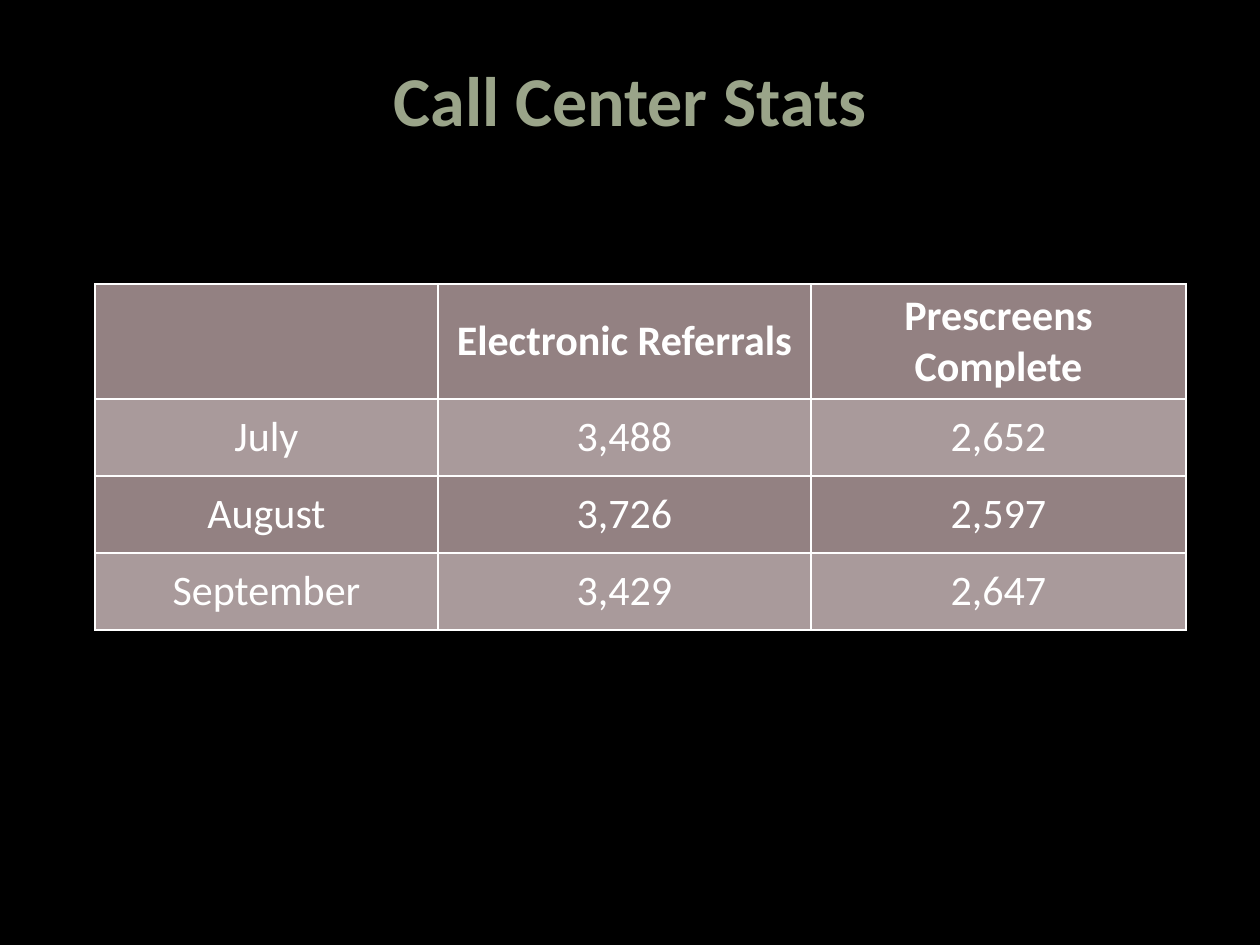
from lxml import etree
from pptx import Presentation
from pptx.dml.color import RGBColor
from pptx.enum.text import MSO_ANCHOR, PP_ALIGN
from pptx.oxml import parse_xml
from pptx.oxml.ns import nsdecls, qn
from pptx.util import Pt

PX = 914400 // 126
CENTER = PP_ALIGN.CENTER
MIDDLE = MSO_ANCHOR.MIDDLE
FONT = "Calibri"
COLORS = {
    "background": "000000",
    "title": "9AA489",
    "outline": "404040",
    "text": "FFFFFF",
    "border": "FFFFFF",
    "dark_row": "938182",
    "light_row": "A99A9B",
}
COL_WIDTHS = [343, 373, 375]
ROW_HEIGHTS = [105, 77, 77, 77]
STATS = [
    ["", "Electronic Referrals", "Prescreens Complete"],
    ["July", "3,488", "2,652"],
    ["August", "3,726", "2,597"],
    ["September", "3,429", "2,647"],
]


def px(n):
    return n * PX


def rgb(name):
    return RGBColor.from_string(COLORS[name])


def write(tf, text, size, color, bold):
    p = tf.paragraphs[0]
    p.alignment = CENTER
    r = p.add_run()
    r.text = text
    r.font.name = FONT
    r.font.size = Pt(size)
    r.font.bold = bold
    r.font.color.rgb = rgb(color)
    return r


def outline_text(r):
    """Give a run a thin, mostly transparent outline."""
    ln = parse_xml(
        f'<a:ln {nsdecls("a")} w="{Pt(0.75)}"><a:solidFill>'
        f'<a:srgbClr val="{COLORS["outline"]}"><a:alpha val="10000"/></a:srgbClr>'
        '</a:solidFill><a:prstDash val="solid"/></a:ln>')
    r.font._element.insert(0, ln)


def add_title(s, text):
    sp = s.shapes.title
    sp.left, sp.top, sp.width, sp.height = map(px, (95, 32, 1070, 134))
    tf = sp.text_frame
    tf.word_wrap = True
    tf.vertical_anchor = MIDDLE
    outline_text(write(tf, text, 40, "title", True))


def set_borders(cell):
    tcPr = cell._tc.get_or_add_tcPr()
    for i, side in enumerate(("lnL", "lnR", "lnT", "lnB")):
        ln = etree.Element(qn(f"a:{side}"), w=str(Pt(1)))
        fill = etree.SubElement(ln, qn("a:solidFill"))
        etree.SubElement(fill, qn("a:srgbClr"), val=COLORS["border"])
        tcPr.insert(i, ln)


def add_stats_table(s):
    frame = s.shapes.add_table(
        len(STATS), len(COL_WIDTHS), px(95), px(284),
        px(sum(COL_WIDTHS)), px(sum(ROW_HEIGHTS)))
    table = frame.table
    for col, width in zip(table.columns, COL_WIDTHS):
        col.width = px(width)
    for i, (row, height) in enumerate(zip(table.rows, ROW_HEIGHTS)):
        row.height = px(height)
        for cell, text in zip(row.cells, STATS[i]):
            cell.vertical_anchor = MIDDLE
            cell.fill.solid()
            cell.fill.fore_color.rgb = rgb("light_row" if i % 2 else "dark_row")
            set_borders(cell)
            if text:
                write(cell.text_frame, text, 24, "text", i == 0)


def main():
    prs = Presentation()
    prs.slide_width, prs.slide_height = px(1260), px(945)
    s = prs.slides.add_slide(prs.slide_layouts[5])
    s.background.fill.solid()
    s.background.fill.fore_color.rgb = rgb("background")

    # Heading
    add_title(s, "Call Center Stats")

    # Monthly figures
    add_stats_table(s)

    prs.save("out.pptx")


if __name__ == "__main__":
    main()
